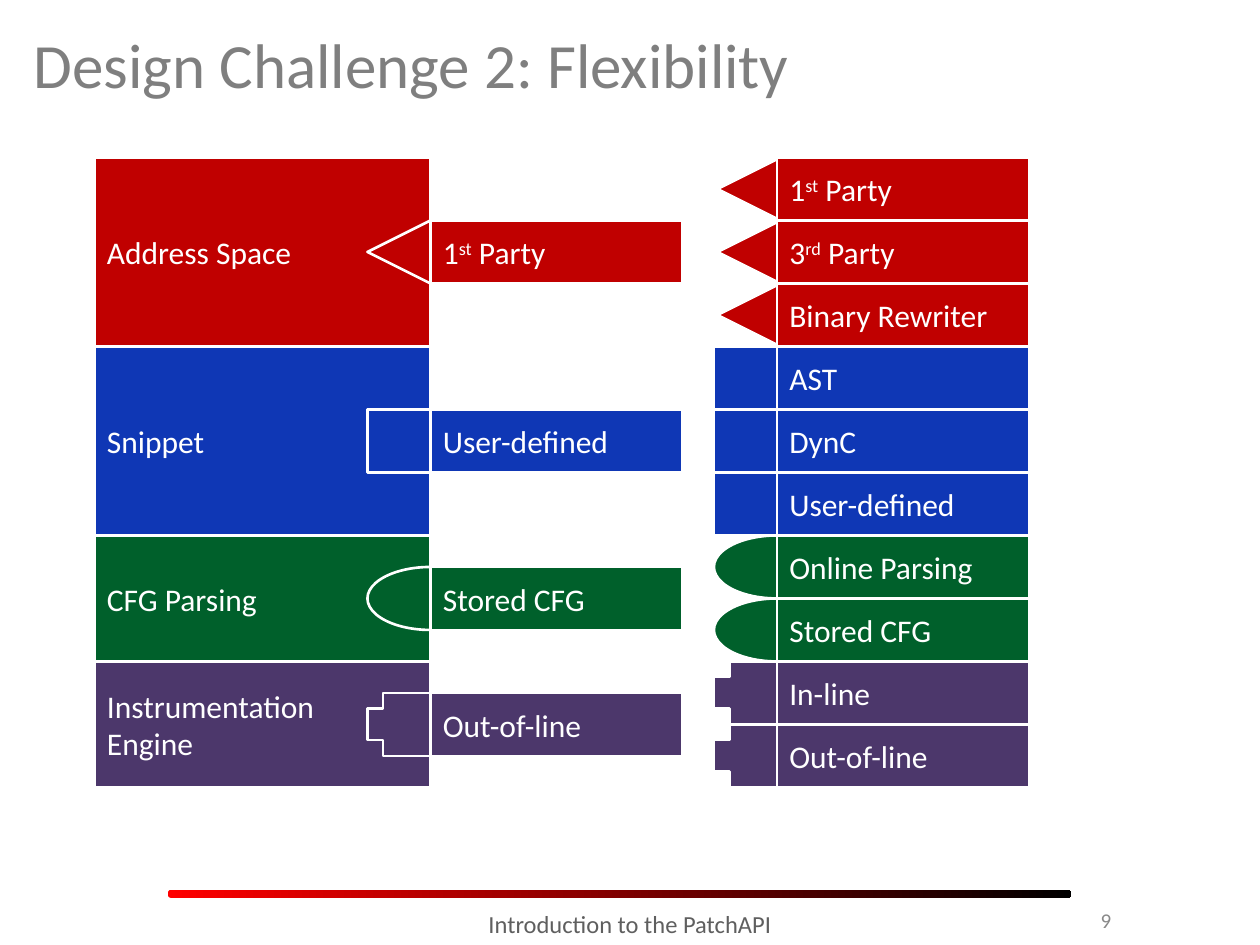
"""Build the slide on flexible plug-in modules of the PatchAPI."""
from pptx import Presentation
from pptx.dml.color import RGBColor
from pptx.enum.shapes import MSO_SHAPE
from pptx.enum.text import MSO_ANCHOR, PP_ALIGN
from pptx.util import Pt

RECT, DIAMOND, PLUS = MSO_SHAPE.RECTANGLE, MSO_SHAPE.DIAMOND, MSO_SHAPE.CROSS
CIRCLE, ROUNDED = MSO_SHAPE.FLOWCHART_CONNECTOR, MSO_SHAPE.ROUNDED_RECTANGLE
TOP, MIDDLE = MSO_ANCHOR.TOP, MSO_ANCHOR.MIDDLE
LEFT, CENTER, RIGHT = PP_ALIGN.LEFT, PP_ALIGN.CENTER, PP_ALIGN.RIGHT

WHITE = RGBColor(0xFF, 0xFF, 0xFF)
BLACK = RGBColor(0x00, 0x00, 0x00)
BRIGHT_RED = RGBColor(0xFF, 0x00, 0x00)
RED = RGBColor(0xC0, 0x00, 0x00)
BLUE = RGBColor(0x0F, 0x37, 0xB5)
GREEN = RGBColor(0x00, 0x60, 0x2B)
PURPLE = RGBColor(0x4C, 0x37, 0x6B)
TITLE_GRAY = RGBColor(0x7F, 0x7F, 0x7F)
FOOTER_GRAY = RGBColor(0x5F, 0x5F, 0x5F)
NUMBER_GRAY = RGBColor(0x89, 0x89, 0x89)

ROW_H = 36
PLUG_W = 72
OPTION_W = 144
MODULE_X, MODULE_W = 54, 192
CHOSEN_X = MODULE_X + MODULE_W
OPTION_X = 444

MODULES = [
    ("Address Space", RED, DIAMOND, "1^st^ Party",
     ["1^st^ Party", "3^rd^ Party", "Binary Rewriter"]),
    ("Snippet", BLUE, RECT, "User-defined", ["AST", "DynC", "User-defined"]),
    ("CFG Parsing", GREEN, CIRCLE, "Stored CFG",
     ["Online Parsing", "Stored CFG"]),
    ("Instrumentation\nEngine", PURPLE, PLUS, "Out-of-line",
     ["In-line", "Out-of-line"]),
]
TEXTS = [
    ("Design Challenge 2: Flexibility", 12, 6, 696, 60, 36, TITLE_GRAY, LEFT, MIDDLE),
    ("Introduction to the PatchAPI", 174, 516, 372, 29, 14, FOOTER_GRAY, CENTER, TOP),
    ("9", 546, 511, 96, 29, 12, NUMBER_GRAY, RIGHT, MIDDLE),
]


def write(sp, text, size, color, align=LEFT, anchor=MIDDLE):
    tf = sp.text_frame
    tf.word_wrap = True
    tf.vertical_anchor = anchor
    for i, line in enumerate(text.split("\n")):
        p = tf.add_paragraph() if i else tf.paragraphs[0]
        p.alignment = align
        p.font.name = "Calibri"
        p.font.size = Pt(size)
        p.font.color.rgb = color
        for j, part in enumerate(line.split("^")):
            r = p.add_run()
            r.text = part
            if j % 2:
                r._r.get_or_add_rPr().set("baseline", "30000")


def add_block(kind, x, y, w, h, color, text=""):
    sp = s.shapes.add_shape(kind, Pt(x), Pt(y), Pt(w), Pt(h))
    sp.shadow.inherit = False
    sp.fill.solid()
    sp.fill.fore_color.rgb = color
    sp.line.color.rgb = WHITE
    sp.line.width = Pt(1.5)
    if text:
        write(sp, text, 18, WHITE)


prs = Presentation()
prs.slide_width, prs.slide_height = Pt(720), Pt(540)
s = prs.slides.add_slide(prs.slide_layouts[6])

bar = s.shapes.add_shape(ROUNDED, Pt(96), Pt(508.5), Pt(516), Pt(4.5))
bar.shadow.inherit = False
bar.adjustments[0] = 0.33
bar.line.fill.background()
bar.fill.gradient()
bar.fill.gradient_angle = 0
for stop, color in zip(bar.fill.gradient_stops, (BRIGHT_RED, BLACK)):
    stop.color.rgb = color

for text, x, y, w, h, size, color, align, anchor in TEXTS:
    box = s.shapes.add_textbox(Pt(x), Pt(y), Pt(w), Pt(h))
    write(box, text, size, color, align, anchor)

y = 90
for name, color, plug, chosen, options in MODULES:
    height = ROW_H * len(options)
    chosen_y = y + (height - ROW_H) / 2
    add_block(RECT, MODULE_X, y, MODULE_W, height, color, name)
    add_block(plug, CHOSEN_X - PLUG_W / 2, chosen_y, PLUG_W, ROW_H, color)
    add_block(RECT, CHOSEN_X, chosen_y, OPTION_W, ROW_H, color, chosen)
    plug_x = OPTION_X - PLUG_W / 2 + (2 if plug == DIAMOND else 0)
    for option in options:
        add_block(plug, plug_x, y, PLUG_W, ROW_H, color)
        add_block(RECT, OPTION_X, y, OPTION_W, ROW_H, color, option)
        y += ROW_H

prs.save("out.pptx")
